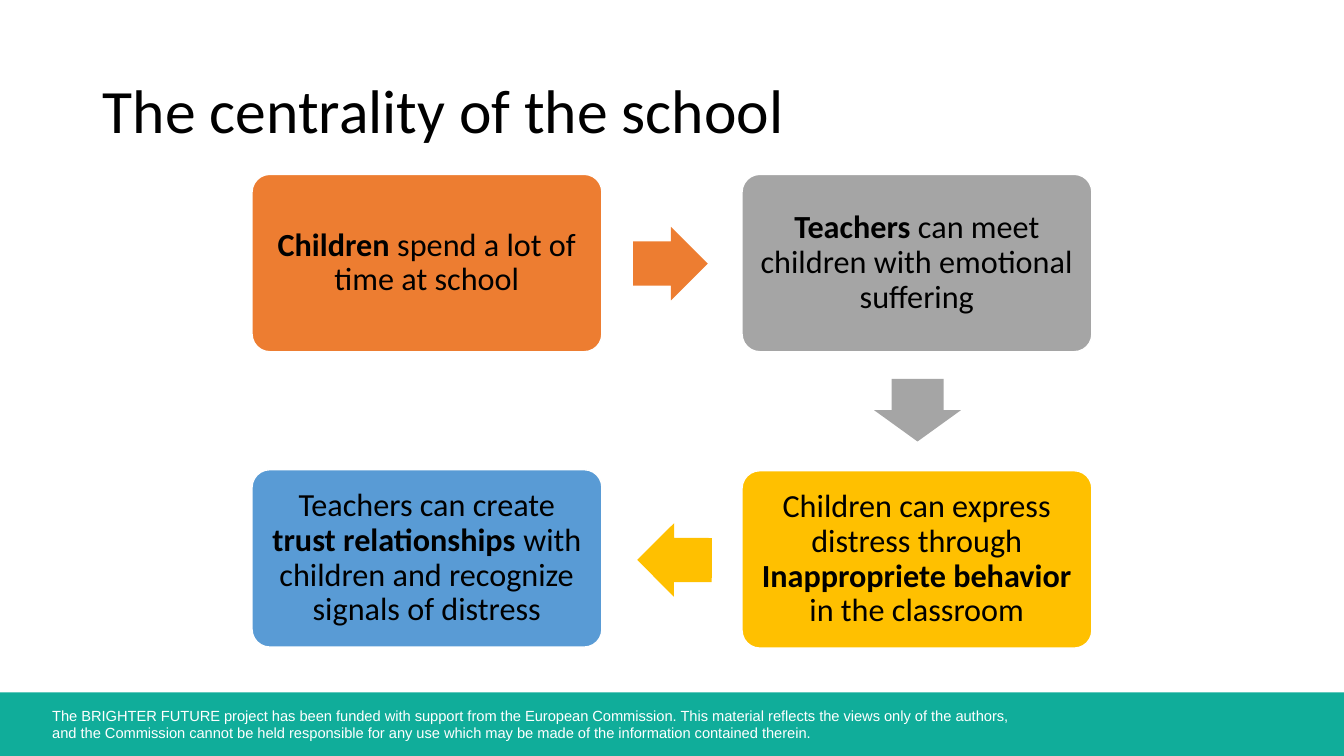
from pptx import Presentation
from pptx.dml.color import RGBColor
from pptx.enum.shapes import MSO_SHAPE
from pptx.enum.text import MSO_ANCHOR, PP_ALIGN
from pptx.util import Inches, Pt

RECTANGLE = MSO_SHAPE.RECTANGLE
ROUNDED = MSO_SHAPE.ROUNDED_RECTANGLE
ARROW = MSO_SHAPE.RIGHT_ARROW
LEFT, CENTER = PP_ALIGN.LEFT, PP_ALIGN.CENTER
TOP, MIDDLE = MSO_ANCHOR.TOP, MSO_ANCHOR.MIDDLE

BLACK = RGBColor(0x00, 0x00, 0x00)
WHITE = RGBColor(0xFF, 0xFF, 0xFF)
TEAL = RGBColor(0x10, 0xAD, 0x9A)
ORANGE = RGBColor(0xED, 0x7D, 0x31)
GRAY = RGBColor(0xA5, 0xA5, 0xA5)
YELLOW = RGBColor(0xFF, 0xC0, 0x00)
BLUE = RGBColor(0x59, 0x9B, 0xD5)

STEP_WIDTH, STEP_HEIGHT = 3.47, 1.76
LEFT_COLUMN, RIGHT_COLUMN = 2.5, 7.36

# Each step: left, top, colour, runs as (text, bold)
STEPS = [
    (LEFT_COLUMN, 1.73, ORANGE,
     [("Children ", True), ("spend a lot of time at school", False)]),
    (RIGHT_COLUMN, 1.73, GRAY,
     [("Teachers", True),
      (" can meet children with emotional suffering", False)]),
    (RIGHT_COLUMN, 4.67, YELLOW,
     [("Children can express distress through ", False),
      ("Inappropriete behavior ", True), ("in the classroom", False)]),
    (LEFT_COLUMN, 4.66, BLUE,
     [("Teachers can create ", False), ("trust relationships ", True),
      ("with children and recognize signals of distress", False)]),
]

# Each arrow: left, top, width, height, rotation, colour
ARROWS = [
    (6.28, 2.25, 0.74, 0.73, 0, ORANGE),
    (8.79, 3.64, 0.62, 0.86, 90, GRAY),
    (6.32, 5.19, 0.74, 0.73, 180.2, YELLOW),
]

FUNDING_LINES = [
    "The BRIGHTER FUTURE project has been funded with support from the "
    "European Commission. This material reflects the views only of the authors, ",
    "and the Commission cannot be held responsible for any use which may be "
    "made of the information contained therein.",
]


def write_text(frame, lines, *, size, font="Calibri", color=BLACK, align=LEFT,
               anchor=MIDDLE, spacing=0.9, inset_y=0.05):
    """Fill a frame with one paragraph; each line is a list of (text, bold)."""
    frame.word_wrap = True
    frame.vertical_anchor = anchor
    frame.margin_left = frame.margin_right = Inches(0.1)
    frame.margin_top = frame.margin_bottom = Inches(inset_y)
    paragraph = frame.paragraphs[0]
    paragraph.alignment = align
    paragraph.line_spacing = spacing
    for number, line in enumerate(lines):
        if number:
            paragraph.add_line_break()
        for text, bold in line:
            run = paragraph.add_run()
            run.text = text
            run.font.name = font
            run.font.size = Pt(size)
            run.font.bold = bold
            run.font.color.rgb = color


def add_block(slide, kind, left, top, width, height, fill):
    block = slide.shapes.add_shape(
        kind, Inches(left), Inches(top), Inches(width), Inches(height))
    block.shadow.inherit = False
    block.fill.solid()
    block.fill.fore_color.rgb = fill
    block.line.fill.background()
    return block


def add_footer(slide):
    add_block(slide, RECTANGLE, 0, 6.87, 13.33, 0.63, TEAL)
    funding = slide.shapes.add_textbox(
        Inches(0.42), Inches(6.96), Inches(10), Inches(0.45))
    write_text(funding.text_frame, [[(line, False)] for line in FUNDING_LINES],
               size=10.5, font="Arial", color=WHITE, anchor=TOP, spacing=1.0)


def add_title(slide, text):
    title = slide.shapes.title
    title.left, title.top = Inches(0.92), Inches(0.4)
    title.width, title.height = Inches(11.5), Inches(1.45)
    write_text(title.text_frame, [[(text, False)]], size=44)


def add_step(slide, left, top, fill, runs):
    step = add_block(slide, ROUNDED, left, top, STEP_WIDTH, STEP_HEIGHT, fill)
    step.adjustments[0] = 0.1
    step.line.color.rgb = WHITE
    step.line.width = Pt(1)
    write_text(step.text_frame, [runs], size=23, align=CENTER, inset_y=0.1)


def add_arrow(slide, left, top, width, height, rotation, fill):
    arrow = add_block(slide, ARROW, left, top, width, height, fill)
    arrow.adjustments[0] = 0.6
    arrow.adjustments[1] = 0.5
    arrow.rotation = rotation


def main():
    deck = Presentation()
    deck.slide_width, deck.slide_height = Inches(13.33), Inches(7.5)
    slide = deck.slides.add_slide(deck.slide_layouts[5])

    # Funding band and title
    add_footer(slide)
    add_title(slide, "The centrality of the school")

    # Clockwise flow of steps
    for step in STEPS:
        add_step(slide, *step)
    for arrow in ARROWS:
        add_arrow(slide, *arrow)

    deck.save("out.pptx")


if __name__ == "__main__":
    main()
